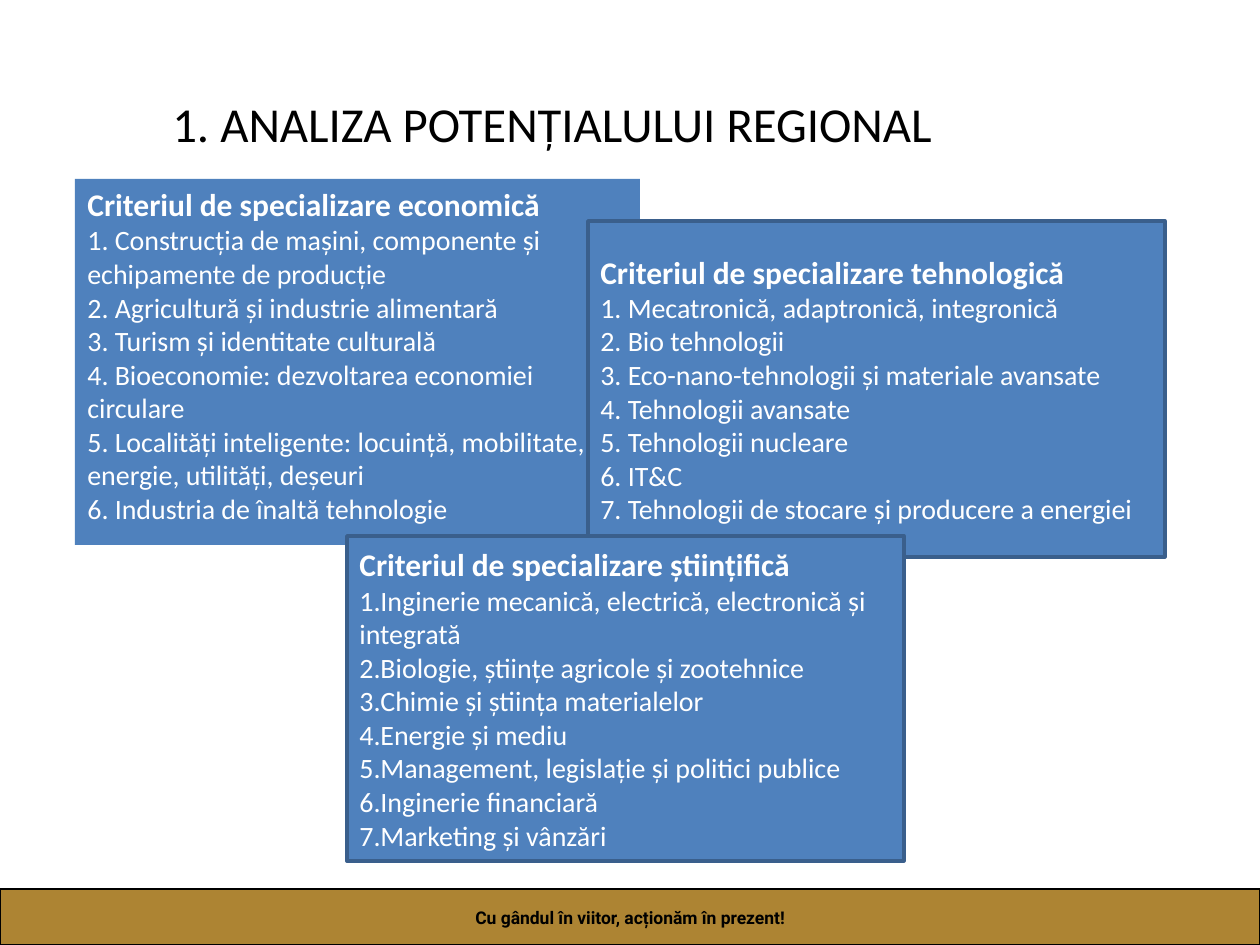
from dataclasses import dataclass

from lxml import etree
from pptx import Presentation
from pptx import util as u
from pptx.dml.color import RGBColor
from pptx.enum import shapes, text
from pptx.oxml.ns import qn

EMU_PER_PX = 914400 / 126


def px(length):
    return u.Emu(round(length * EMU_PER_PX))


@dataclass(frozen=True)
class Theme:
    panel: str = "4F81BD"
    panel_border: str = "3A5F8C"
    footer: str = "996600"
    dark: str = "000000"
    light: str = "FFFFFF"
    body_font: str = "Calibri"
    footer_font: str = "Roboto"
    title_size: float = 27.9
    heading_size: int = 18
    item_size: int = 16
    footer_size: int = 10


class SlideBuilder:
    def __init__(self, slide, theme):
        self.slide = slide
        self.theme = theme

    def format_runs(self, paragraph, size, color, font=None, bold=False):
        for run in paragraph.runs:
            run.font.name = font or self.theme.body_font
            run.font.size = u.Pt(size)
            run.font.bold = bold
            run.font.color.rgb = RGBColor.from_string(color)

    def rectangle(self, box, fill, border=None, border_width=0):
        shape = self.slide.shapes.add_shape(
            shapes.MSO_SHAPE.RECTANGLE, *map(px, box))
        shape.shadow.inherit = False
        shape.fill.solid()
        shape.fill.fore_color.rgb = RGBColor.from_string(fill)
        if border:
            shape.line.color.rgb = RGBColor.from_string(border)
            shape.line.width = u.Pt(border_width)
        else:
            shape.line.fill.background()
        shape.text_frame.word_wrap = True
        return shape

    def title(self, box, words):
        shape = self.slide.shapes.add_textbox(*map(px, box))
        frame = shape.text_frame
        frame.word_wrap = True
        frame.vertical_anchor = text.MSO_ANCHOR.MIDDLE
        frame.text = words
        paragraph = frame.paragraphs[0]
        paragraph.alignment = text.PP_ALIGN.CENTER
        self.format_runs(paragraph, self.theme.title_size, self.theme.dark)

    def criterion(self, box, heading, items, gap=" ", border=None,
                  anchor=text.MSO_ANCHOR.MIDDLE):
        """Panel with a bold heading and a numbered list; gap follows each number."""
        theme = self.theme
        frame = self.rectangle(box, theme.panel, border, 2).text_frame
        frame.vertical_anchor = anchor
        frame.text = heading
        first = frame.paragraphs[0]
        first.alignment = text.PP_ALIGN.LEFT
        self.format_runs(first, theme.heading_size, theme.light, bold=True)
        for item in items:
            paragraph = frame.add_paragraph()
            properties = paragraph._p.get_or_add_pPr()
            properties.set("marL", "0")
            properties.set("indent", "0")
            etree.SubElement(properties, qn("a:buFont"), typeface="+mj-lt")
            etree.SubElement(properties, qn("a:buAutoNum"), type="arabicPeriod")
            paragraph.text = gap + item
            paragraph.alignment = text.PP_ALIGN.LEFT
            self.format_runs(paragraph, theme.item_size, theme.light)

    def footer(self, box, words, opacity):
        theme = self.theme
        shape = self.rectangle(box, theme.footer, theme.dark, 0.75)
        color = shape._element.spPr.find(qn("a:solidFill"))[0]
        etree.SubElement(color, qn("a:alpha"), val=str(opacity * 1000))
        frame = shape.text_frame
        frame.vertical_anchor = text.MSO_ANCHOR.MIDDLE
        frame.text = words
        paragraph = frame.paragraphs[0]
        paragraph.alignment = text.PP_ALIGN.CENTER
        self.format_runs(paragraph, theme.footer_size, theme.dark,
                         theme.footer_font, bold=True)


ECONOMIC = [
    "Construcția de mașini, componente și echipamente de producție",
    "Agricultură și industrie alimentară",
    "Turism și identitate culturală",
    "Bioeconomie: dezvoltarea economiei circulare",
    "Localități inteligente: locuință, mobilitate, energie, utilități, deșeuri",
    "Industria de înaltă tehnologie",
]
TECHNOLOGICAL = [
    "Mecatronică, adaptronică, integronică",
    "Bio tehnologii",
    "Eco-nano-tehnologii și materiale avansate",
    "Tehnologii avansate",
    "Tehnologii nucleare",
    "IT&C",
    "Tehnologii de stocare și producere a energiei",
]
SCIENTIFIC = [
    "Inginerie mecanică, electrică, electronică și integrată",
    "Biologie, științe agricole și zootehnice",
    "Chimie și știința materialelor",
    "Energie și mediu",
    "Management, legislație și politici publice",
    "Inginerie financiară",
    "Marketing și vânzări",
]


def main():
    presentation = Presentation()
    presentation.slide_width = px(1260)
    presentation.slide_height = px(945)
    slide = presentation.slides.add_slide(presentation.slide_layouts[6])
    theme = Theme()
    builder = SlideBuilder(slide, theme)

    builder.footer((0, 889, 1260, 56),
                   "Cu gândul în viitor, acționăm în prezent!", opacity=80)
    builder.title((32, 70, 1040, 105), "1. ANALIZA POTENȚIALULUI REGIONAL")
    builder.criterion((75, 179, 565, 366), "Criteriul de specializare economică",
                      ECONOMIC, anchor=text.MSO_ANCHOR.TOP)
    builder.criterion((588, 221, 577, 336), "Criteriul de specializare tehnologică",
                      TECHNOLOGICAL, border=theme.panel_border)
    builder.criterion((347, 536, 557, 325), "Criteriul de specializare științifică",
                      SCIENTIFIC, gap="", border=theme.panel_border)
    presentation.save("out.pptx")


if __name__ == "__main__":
    main()
